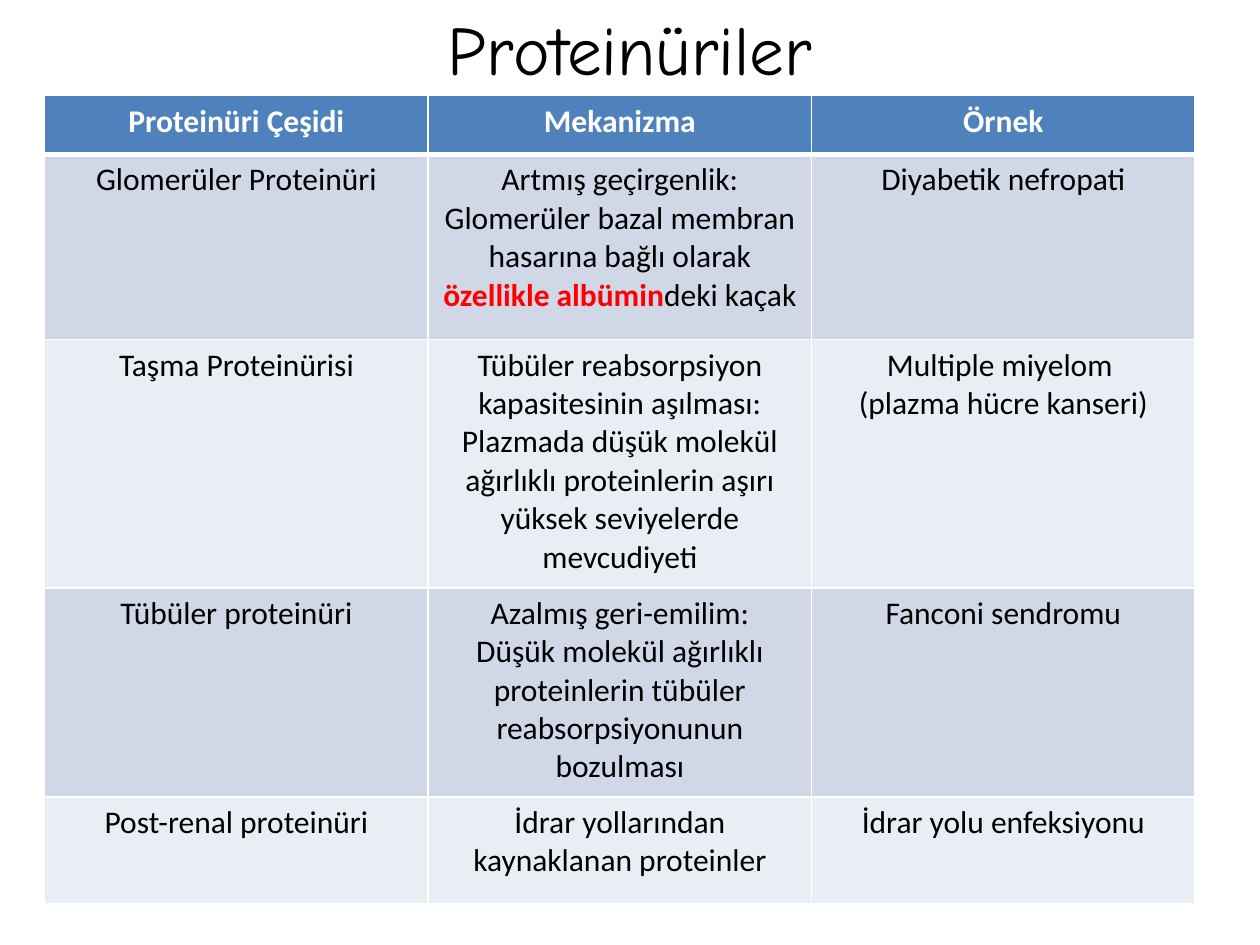
import pptx
import pptx.dml.color
import pptx.enum.text
import pptx.oxml.ns
import pptx.util
from lxml import etree

Pt = pptx.util.Pt
RGBColor = pptx.dml.color.RGBColor

BLACK = RGBColor(0x00, 0x00, 0x00)
WHITE = RGBColor(0xFF, 0xFF, 0xFF)
RED = RGBColor(0xFF, 0x00, 0x00)
HEADER_BLUE = RGBColor(0x4F, 0x81, 0xBD)
BAND_DARK = RGBColor(0xD0, 0xD8, 0xE8)
BAND_LIGHT = RGBColor(0xE9, 0xED, 0xF4)

TITLE_FONT = "Comic Neue"
TABLE_FONT = "Calibri"
EMPHASIS = "özellikle albümin"

COLUMN_WIDTH = 219.12
ROW_HEIGHTS = [33.6, 105.84, 141.84, 119.52, 61.2]

# Each cell is a list of paragraphs, each paragraph a list of runs.
ROWS = [
    [[["Proteinüri Çeşidi"]], [["Mekanizma"]], [["Örnek"]]],
    [
        [["Glomerüler Proteinüri"]],
        [
            ["Artmış geçirgenlik:"],
            ["Glomerüler bazal membran hasarına bağlı olarak ", EMPHASIS, "deki kaçak"],
        ],
        [["Diyabetik nefropati"]],
    ],
    [
        [["Taşma Proteinürisi"]],
        [
            ["Tübüler reabsorpsiyon kapasitesinin aşılması:"],
            ["Plazmada düşük molekül ağırlıklı proteinlerin aşırı yüksek seviyelerde mevcudiyeti"],
        ],
        [["Multiple miyelom "], ["(plazma hücre kanseri)"]],
    ],
    [
        [["Tübüler proteinüri"]],
        [
            ["Azalmış geri-emilim:"],
            ["Düşük molekül ağırlıklı proteinlerin tübüler reabsorpsiyonunun bozulması"],
        ],
        [["Fanconi sendromu"]],
    ],
    [
        [["Post-renal proteinüri"]],
        [["İdrar yollarından kaynaklanan proteinler"]],
        [["İdrar yolu enfeksiyonu"]],
    ],
]


def add_run(paragraph, text, font_name, size, color, bold=False):
    paragraph.alignment = pptx.enum.text.PP_ALIGN.CENTER
    run = paragraph.add_run()
    run.text = text
    run.font.name = font_name
    run.font.size = Pt(size)
    run.font.bold = bold
    run.font.color.rgb = color


def add_title(slide, text):
    title = slide.shapes.add_textbox(Pt(36), Pt(0), Pt(648), Pt(54.72))
    frame = title.text_frame
    frame.word_wrap = True
    frame.vertical_anchor = pptx.enum.text.MSO_ANCHOR.MIDDLE
    add_run(frame.paragraphs[0], text, TITLE_FONT, 39.6, BLACK)


def set_borders(cell, top, bottom):
    """Draw white cell borders; must run before the fill is set."""
    properties = cell._tc.get_or_add_tcPr()
    for side, width in (("L", 1), ("R", 1), ("T", top), ("B", bottom)):
        line = etree.SubElement(
            properties, pptx.oxml.ns.qn(f"a:ln{side}"), w=str(Pt(width))
        )
        fill = etree.SubElement(line, pptx.oxml.ns.qn("a:solidFill"))
        etree.SubElement(fill, pptx.oxml.ns.qn("a:srgbClr"), val=str(WHITE))


def fill_cell(cell, paragraphs, row_index):
    is_header = row_index == 0
    set_borders(cell, top=3 if row_index == 1 else 1, bottom=3 if is_header else 1)
    cell.fill.solid()
    if is_header:
        cell.fill.fore_color.rgb = HEADER_BLUE
    else:
        cell.fill.fore_color.rgb = BAND_DARK if row_index % 2 else BAND_LIGHT

    frame = cell.text_frame
    for index, runs in enumerate(paragraphs):
        paragraph = frame.add_paragraph() if index else frame.paragraphs[0]
        for text in runs:
            emphasized = text == EMPHASIS
            color = RED if emphasized else WHITE if is_header else BLACK
            add_run(paragraph, text, TABLE_FONT, 18, color, is_header or emphasized)


def add_proteinuria_table(slide):
    column_count = len(ROWS[0])
    table = slide.shapes.add_table(
        len(ROWS), column_count, Pt(25.56), Pt(54.72),
        Pt(COLUMN_WIDTH * column_count), Pt(sum(ROW_HEIGHTS)),
    ).table
    for column in table.columns:
        column.width = Pt(COLUMN_WIDTH)
    for row_index, (height, cells) in enumerate(zip(ROW_HEIGHTS, ROWS)):
        table.rows[row_index].height = Pt(height)
        for column_index, paragraphs in enumerate(cells):
            fill_cell(table.cell(row_index, column_index), paragraphs, row_index)


def main():
    presentation = pptx.Presentation()
    presentation.slide_width = Pt(720)
    presentation.slide_height = Pt(540)
    slide = presentation.slides.add_slide(presentation.slide_layouts[6])
    add_title(slide, "Proteinüriler")
    add_proteinuria_table(slide)
    presentation.save("out.pptx")


if __name__ == "__main__":
    main()
